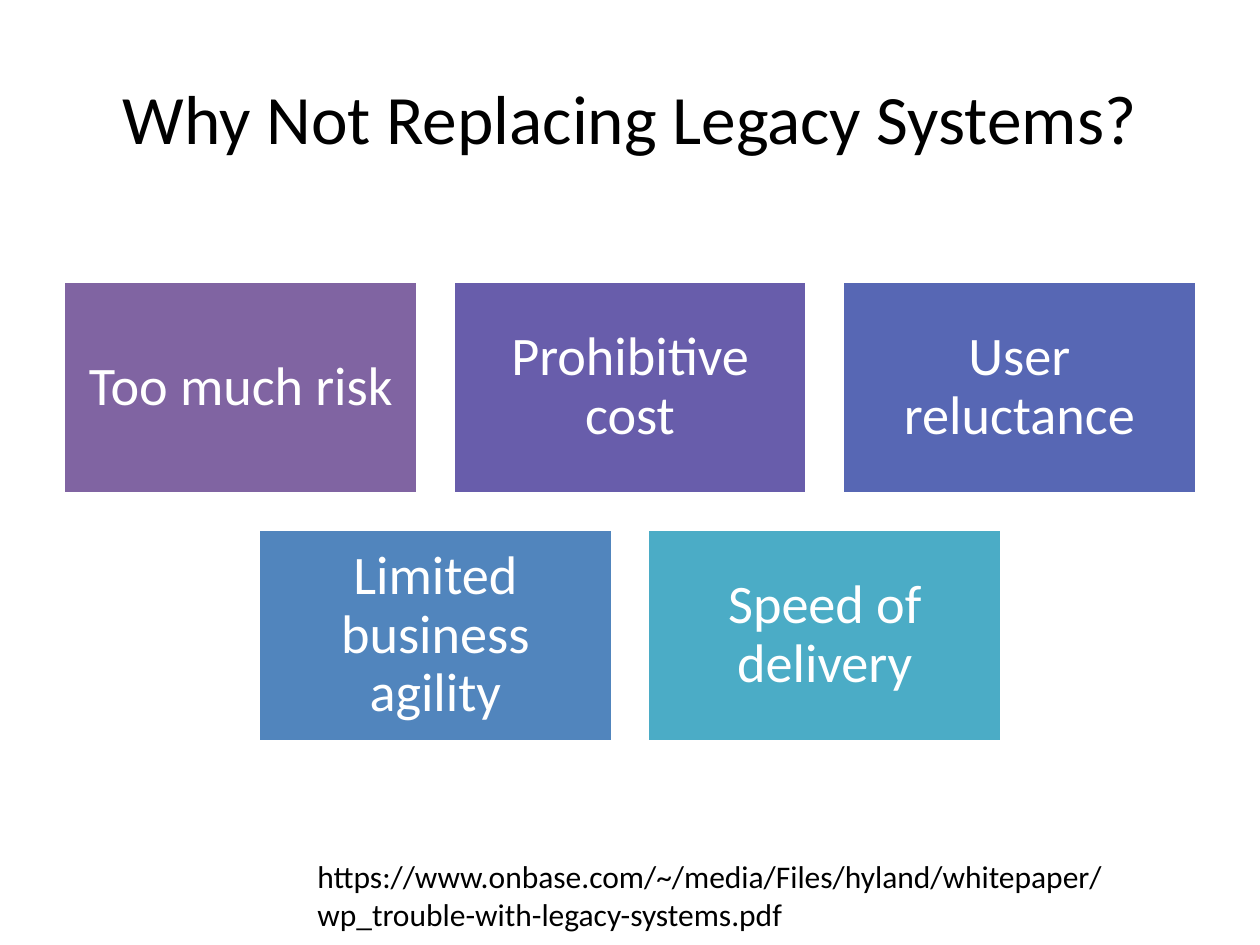
from dataclasses import dataclass

import pptx
import pptx.dml.color
import pptx.enum.shapes
import pptx.enum.text
import pptx.util
from pptx.util import Inches


@dataclass(frozen=True)
class Theme:
    font: str = "Calibri"
    text: str = "000000"
    light: str = "FFFFFF"
    title_size: float = 39.6
    reason_size: float = 31
    source_size: float = 18
    reason_fills: tuple = ("8064A2", "685DAB", "5767B4", "5185BD", "4BACC6")


theme = Theme()


def rgb(value):
    return pptx.dml.color.RGBColor.from_string(value)


def format_text(text_frame, size, color, alignment):
    text_frame.word_wrap = True
    for paragraph in text_frame.paragraphs:
        paragraph.alignment = alignment
        for run in paragraph.runs:
            run.font.name = theme.font
            run.font.size = pptx.util.Pt(size)
            run.font.color.rgb = rgb(color)


align = pptx.enum.text.PP_ALIGN
middle = pptx.enum.text.MSO_ANCHOR.MIDDLE

presentation = pptx.Presentation()
presentation.slide_width = Inches(10)
presentation.slide_height = Inches(7.5)
slide = presentation.slides.add_slide(presentation.slide_layouts[5])

title = slide.shapes.title
title.left, title.top = Inches(0.5), Inches(0.3)
title.width, title.height = Inches(9), Inches(1.25)
title.text_frame.text = "Why Not Replacing Legacy Systems?"
title.text_frame.vertical_anchor = middle
format_text(title.text_frame, theme.title_size, theme.text, align.CENTER)

# Rows of reason boxes, each row centred on the slide
reason_rows = [
    ["Too much risk", "Prohibitive cost", "User reluctance"],
    ["Limited business agility", "Speed of delivery"],
]
box_width, box_height, gap = 2.81, 1.69, 0.28
grid_top = 2.23
fills = iter(theme.reason_fills)

for row, reasons in enumerate(reason_rows):
    row_width = len(reasons) * (box_width + gap) - gap
    row_left = (10 - row_width) / 2
    for column, reason in enumerate(reasons):
        box = slide.shapes.add_shape(
            pptx.enum.shapes.MSO_SHAPE.RECTANGLE,
            Inches(row_left + column * (box_width + gap)),
            Inches(grid_top + row * (box_height + gap)),
            Inches(box_width),
            Inches(box_height),
        )
        box.shadow.inherit = False
        box.fill.solid()
        box.fill.fore_color.rgb = rgb(next(fills))
        box.line.color.rgb = rgb(theme.light)
        box.line.width = pptx.util.Pt(2)

        text_frame = box.text_frame
        text_frame.text = reason
        text_frame.vertical_anchor = middle
        text_frame.margin_left = text_frame.margin_right = Inches(0.13)
        text_frame.margin_top = text_frame.margin_bottom = Inches(0.13)
        text_frame.paragraphs[0].line_spacing = 0.9
        format_text(text_frame, theme.reason_size, theme.light, align.CENTER)

source = slide.shapes.add_textbox(
    Inches(2.42), Inches(6.75), Inches(7.42), Inches(0.71)
)
source.text_frame.text = (
    "https://www.onbase.com/~/media/Files/hyland/whitepaper/"
    "wp_trouble-with-legacy-systems.pdf"
)
source.text_frame.auto_size = pptx.enum.text.MSO_AUTO_SIZE.SHAPE_TO_FIT_TEXT
format_text(source.text_frame, theme.source_size, theme.text, align.LEFT)

presentation.save("out.pptx")
